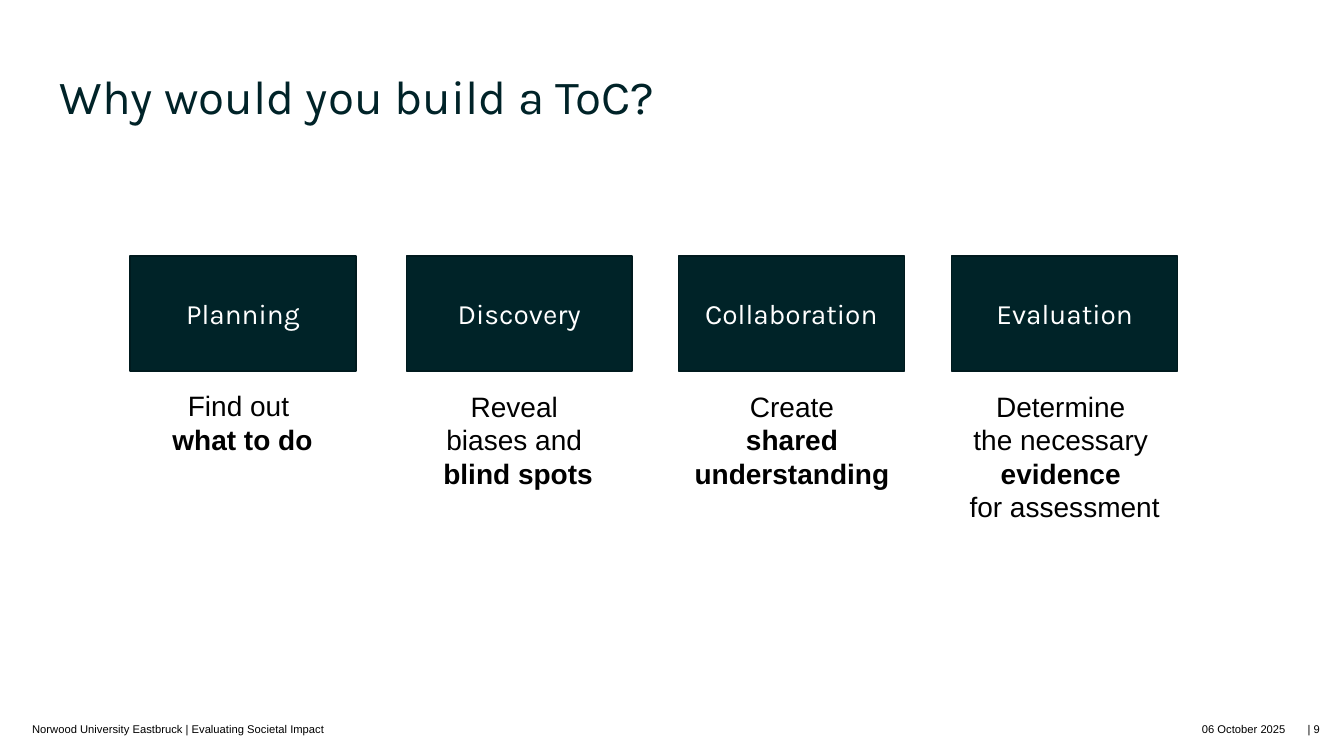
import pptx
import pptx.util
import pptx.dml.color
import pptx.enum.shapes
import pptx.enum.text

Inches, Pt = pptx.util.Inches, pptx.util.Pt
Align = pptx.enum.text.PP_ALIGN
Anchor = pptx.enum.text.MSO_ANCHOR
Fit = pptx.enum.text.MSO_AUTO_SIZE
RGB = pptx.dml.color.RGBColor.from_string

COLORS = {"dark": "002328", "edge": "001A1E", "white": "FFFFFF", "black": "000000"}
FORMS = {
    "title": {"name": "Karla", "size": Pt(34), "bold": False},
    "head": {"name": "Karla", "size": Pt(20), "bold": False},
    "body": {"name": "Arial", "size": Pt(20), "bold": False},
    "strong": {"name": "Arial", "size": Pt(20), "bold": True},
    "foot": {"name": "Arial", "size": Pt(8), "bold": False},
}


def write(para, text, form, color):
    run = para.add_run()
    run.text = text
    for key, value in FORMS[form].items():
        setattr(run.font, key, value)
    run.font.color.rgb = RGB(COLORS[color])


def add_box(left, top, width, height, align):
    box = slide.shapes.add_textbox(Inches(left), Inches(top), Inches(width), Inches(height))
    box.text_frame.word_wrap = True
    para = box.text_frame.paragraphs[0]
    para.alignment = align
    return box.text_frame, para


deck = pptx.Presentation()
deck.slide_width, deck.slide_height = Inches(13.33), Inches(7.5)
slide = deck.slides.add_slide(deck.slide_layouts[5])

# Title
title = slide.shapes.title
title.left, title.top = Inches(0.59), Inches(0.79)
title.width, title.height = Inches(12.15), Inches(0.78)
frame = title.text_frame
for side in ("left", "top", "right", "bottom"):
    setattr(frame, "margin_" + side, 0)
frame.word_wrap = True
frame.auto_size = Fit.NONE
frame.vertical_anchor = Anchor.TOP
para = frame.paragraphs[0]
para.alignment = Align.LEFT
para.line_spacing = Pt(32)
write(para, "Why would you build a ToC?", "title", "dark")

# Reasons: heading, card left, text left, width and height, lines with style
reasons = [
    ("Planning", 1.29, 1.41, 1.99, 0.77,
     [("Find out ", "body"), ("what to do", "strong")]),
    ("Discovery", 4.03, 4.01, 2.26, 1.45,
     [("Reveal ", "body"), ("biases and ", "body"), ("blind spots", "strong")]),
    ("Collaboration", 6.73, 6.7, 2.31, 1.45,
     [("Create", "body"), ("shared", "strong"), ("understanding", "strong")]),
    ("Evaluation", 9.44, 9.38, 2.36, 1.78,
     [("Determine ", "body"), ("the necessary ", "body"),
      ("evidence ", "strong"), ("for assessment", "body")]),
]
for head, x, left, width, height, lines in reasons:
    card = slide.shapes.add_shape(
        pptx.enum.shapes.MSO_SHAPE.RECTANGLE,
        Inches(x), Inches(2.54), Inches(2.24), Inches(1.14))
    card.shadow.inherit = False
    card.fill.solid()
    card.fill.fore_color.rgb = RGB(COLORS["dark"])
    card.line.color.rgb = RGB(COLORS["edge"])
    card.line.width = Pt(1)
    card.text_frame.vertical_anchor = Anchor.MIDDLE
    para = card.text_frame.paragraphs[0]
    para.alignment = Align.CENTER
    write(para, head, "head", "white")

    frame, para = add_box(left, 3.81, width, height, Align.CENTER)
    frame.auto_size = Fit.SHAPE_TO_FIT_TEXT
    for index, (text, form) in enumerate(lines):
        if index:
            para.add_line_break()
        write(para, text, form, "black")

# Footer
notes = [
    ("Norwood University Eastbruck | Evaluating Societal Impact", 0.22, 10, Align.LEFT),
    ("06 October 2025", 10.85, 2, Align.RIGHT),
    ("| 9", 12.59, 0.6, Align.RIGHT),
]
for text, left, width, align in notes:
    frame, para = add_box(left, 7.12, width, 0.14, align)
    write(para, text, "foot", "black")

deck.save("out.pptx")
